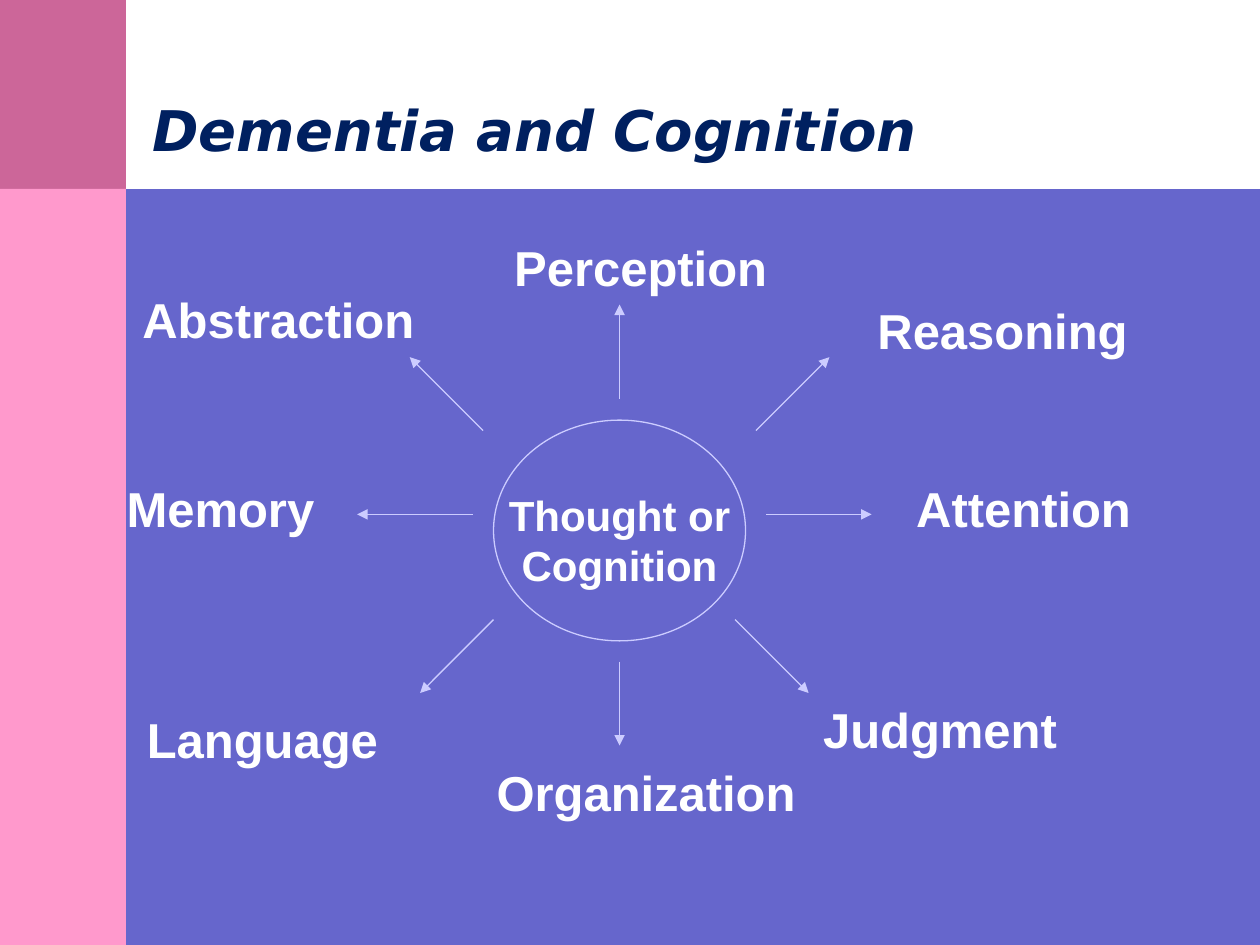
from lxml.etree import SubElement
from pptx import Presentation
from pptx.dml.color import RGBColor
from pptx.enum.shapes import MSO_CONNECTOR, MSO_SHAPE
from pptx.enum.text import MSO_ANCHOR, MSO_AUTO_SIZE, PP_ALIGN
from pptx.oxml.ns import qn
from pptx.util import Cm, Pt


def color(hex_value):
    return RGBColor.from_string(hex_value)


class CognitionSlide:
    backdrop = "6666CC"
    outline = "CCCCFF"
    label_color = "FFFFFF"
    title_color = "002060"
    label_font = "Arial"
    title_font = "DejaVu Sans"

    def __init__(self, deck):
        self.slide = deck.slides.add_slide(deck.slide_layouts[5])
        fill = self.slide.background.fill
        fill.solid()
        fill.fore_color.rgb = color(self.backdrop)

    def style(self, paragraph, font_name, size, font_color, italic=False):
        font = paragraph.font
        font.name, font.size = font_name, Pt(size)
        font.bold, font.italic = True, italic
        font.color.rgb = color(font_color)

    def shape(self, preset, box):
        shape = self.slide.shapes.add_shape(preset, *map(Cm, box))
        shape.shadow.inherit = False
        return shape

    def band(self, box, fill_color):
        band = self.shape(MSO_SHAPE.RECTANGLE, box)
        band.fill.solid()
        band.fill.fore_color.rgb = color(fill_color)
        band.line.fill.background()

    def hub(self, box):
        hub = self.shape(MSO_SHAPE.OVAL, box)
        hub.fill.background()
        hub.line.color.rgb = color(self.outline)
        hub.line.width = Pt(0.75)

    def arrow(self, start, end):
        arrow = self.slide.shapes.add_connector(
            MSO_CONNECTOR.STRAIGHT, *map(Cm, start + end))
        arrow.line.color.rgb = color(self.outline)
        arrow.line.width = Pt(0.75)
        SubElement(arrow.line._get_or_add_ln(), qn("a:tailEnd"), type="triangle")
        SubElement(arrow.element.spPr, qn("a:effectLst"))

    def label(self, text, box, size=28):
        frame = self.slide.shapes.add_textbox(*map(Cm, box)).text_frame
        frame.word_wrap = True
        frame.auto_size = MSO_AUTO_SIZE.SHAPE_TO_FIT_TEXT
        paragraph = frame.paragraphs[0]
        paragraph.text = text
        paragraph.alignment = PP_ALIGN.CENTER
        self.style(paragraph, self.label_font, size, self.label_color)

    def title(self, text, box):
        title = self.slide.shapes.title
        title.left, title.top, title.width, title.height = map(Cm, box)
        frame = title.text_frame
        frame.text = text
        frame.word_wrap = True
        frame.auto_size = MSO_AUTO_SIZE.NONE
        frame.vertical_anchor = MSO_ANCHOR.BOTTOM
        paragraph = frame.paragraphs[0]
        paragraph.alignment = PP_ALIGN.LEFT
        self.style(paragraph, self.title_font, 32, self.title_color, italic=True)
        self.slide.shapes.element.append(title.element)


BANDS = [
    ((0, 0, 25.4, 3.81), "FFFFFF"),
    ((0, 0, 2.54, 3.81), "CC6699"),
    ((0, 3.81, 2.54, 15.24), "FF99CC"),
]

LABEL_HEIGHT = 1.45
FACULTIES = [
    ("Memory", (2.12, 9.53, 4.65), (9.53, 10.37), (7.2, 10.37)),
    ("Language", (2.54, 14.18, 5.5), (9.95, 12.49), (8.47, 13.97)),
    ("Abstraction", (2.54, 5.72, 6.14), (9.74, 8.68), (8.26, 7.2)),
    ("Organization", (9.53, 15.24, 6.99), (12.49, 13.34), (12.49, 15.03)),
    ("Judgment", (16.09, 13.97, 5.72), (14.82, 12.49), (16.3, 13.97)),
    ("Attention", (18.2, 9.53, 4.87), (15.45, 10.37), (17.57, 10.37)),
    ("Reasoning", (16.93, 5.93, 6.56), (15.24, 8.68), (16.72, 7.2)),
    ("Perception", (9.95, 4.66, 5.93), (12.49, 8.04), (12.49, 6.14)),
]


def main():
    deck = Presentation()
    deck.slide_width, deck.slide_height = Cm(25.4), Cm(19.05)
    page = CognitionSlide(deck)
    for box, fill_color in BANDS:
        page.band(box, fill_color)
    page.hub((9.95, 8.47, 5.08, 4.45))
    for faculty, position, start, end in FACULTIES:
        page.arrow(start, end)
        page.label(faculty, position + (LABEL_HEIGHT,))
    page.label("Thought or Cognition", (9.95, 9.74, 5.08, 2.31), size=24)
    page.title("Dementia and Cognition", (2.82, 1.3, 22.58, 2.1))
    deck.save("out.pptx")


if __name__ == "__main__":
    main()
